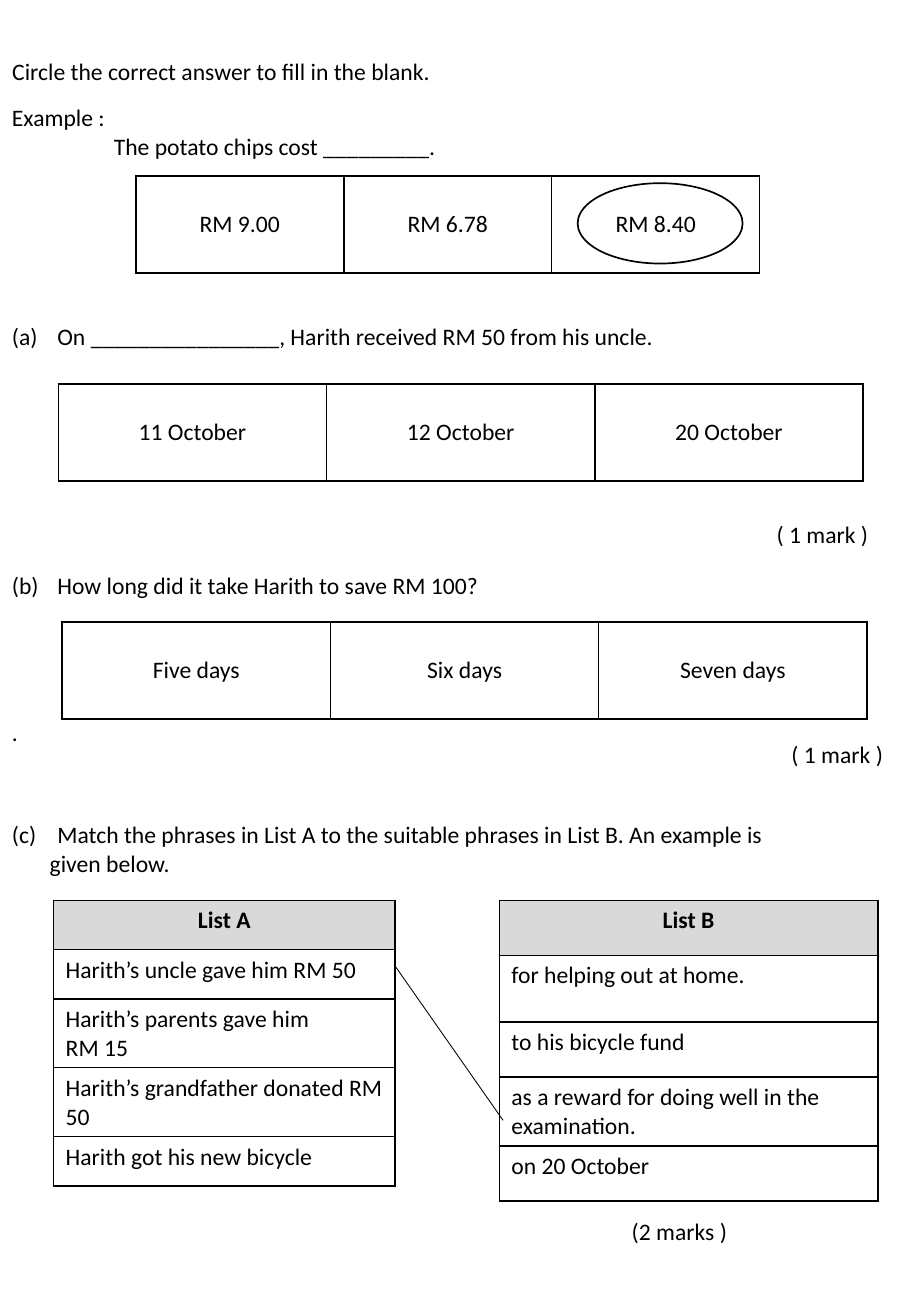
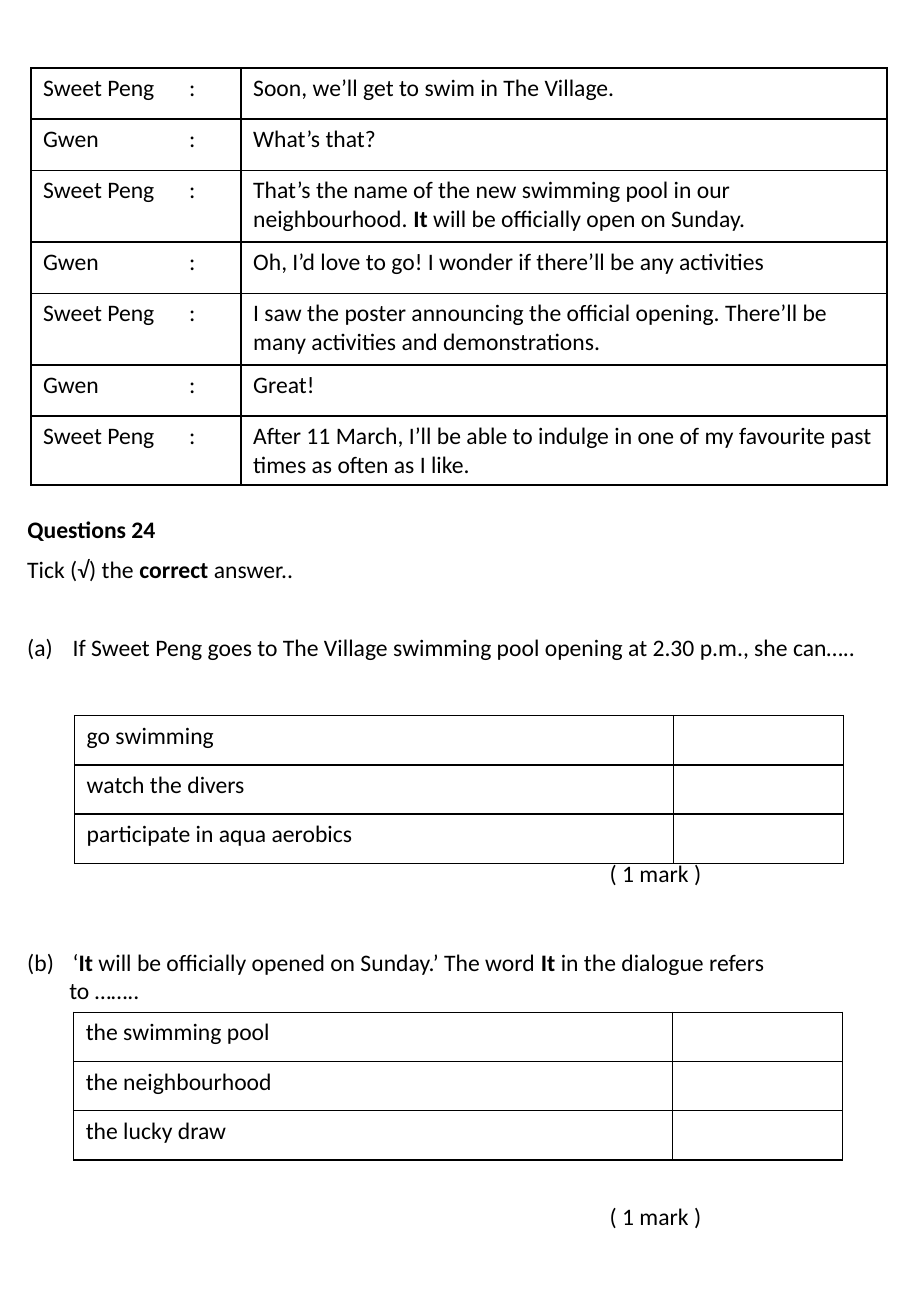
from dataclasses import dataclass

from lxml import etree
from pptx import Presentation
from pptx import util as u
from pptx.dml.color import RGBColor
from pptx.enum import shapes, text
from pptx.oxml import ns

Cm, Pt = u.Cm, u.Pt


@dataclass(frozen=True)
class Theme:
    font: str = "Calibri"
    size: int = 14
    ink: RGBColor = RGBColor(0, 0, 0)
    header: RGBColor = RGBColor(0xD9, 0xD9, 0xD9)
    border: float = 1
    hanging: float = 0.95
    width: float = 18.42


theme = Theme()
LEFT, CENTER = text.PP_ALIGN.LEFT, text.PP_ALIGN.CENTER


def write_text(frame, content, align=LEFT, number=0, indent=0, tab=0):
    for index, line in enumerate(content.split("\n")):
        paragraph = frame.add_paragraph() if index else frame.paragraphs[0]
        paragraph.alignment = align
        properties = paragraph._p.get_or_add_pPr()
        if number and not index:
            properties.set("marL", str(Cm(theme.hanging)))
            properties.set("indent", str(-Cm(theme.hanging)))
            etree.SubElement(properties, ns.qn("a:buFont"), typeface="+mj-lt")
            etree.SubElement(properties, ns.qn("a:buAutoNum"),
                             type="alphaLcParenBoth", startAt=str(number))
        elif indent and index:
            properties.set("marL", str(Cm(indent)))
            properties.set("indent", "0")
        if tab:
            tabs = etree.SubElement(properties, ns.qn("a:tabLst"))
            etree.SubElement(tabs, ns.qn("a:tab"), pos=str(Cm(tab)), algn="l")
        for part, words in enumerate(line.split("*")):
            if words:
                run = paragraph.add_run()
                run.text = words
                run.font.name = theme.font
                run.font.size = Pt(theme.size)
                run.font.bold = part % 2 == 1
                run.font.color.rgb = theme.ink


def add_grid(slide, left, top, widths, heights, rows, centered=False, header=False, tab=0):
    frame = slide.shapes.add_table(len(heights), len(widths), Cm(left), Cm(top),
                                   Cm(sum(widths)), Cm(sum(heights)))
    table = frame.table
    table.first_row = table.horz_banding = False
    for column, width in zip(table.columns, widths):
        column.width = Cm(width)
    for row, height in zip(table.rows, heights):
        row.height = Cm(height)
    for row_index, row in enumerate(rows):
        for column_index, content in enumerate(row):
            cell = table.cell(row_index, column_index)
            is_header = header and row_index == 0
            write_text(cell.text_frame, content,
                       CENTER if centered or is_header else LEFT,
                       tab=0 if column_index else tab)
            cell.vertical_anchor = text.MSO_ANCHOR.MIDDLE if centered else text.MSO_ANCHOR.TOP
            properties = cell._tc.get_or_add_tcPr()
            for side in ("lnL", "lnR", "lnT", "lnB"):
                border = etree.SubElement(properties, ns.qn(f"a:{side}"), w=str(Pt(theme.border)))
                fill = etree.SubElement(border, ns.qn("a:solidFill"))
                etree.SubElement(fill, ns.qn("a:srgbClr"), val=str(theme.ink))
            if is_header:
                cell.fill.solid()
                cell.fill.fore_color.rgb = theme.header
            else:
                cell.fill.background()


presentation = Presentation()
presentation.slide_width = Cm(19.05)
presentation.slide_height = Cm(27.51)
title_only = presentation.slide_layouts[5]

slides = []
for left, top, heading in [
    (0, 1.07, "Circle the correct answer to fill in the blank."),
    (0.32, 10.64, "*Questions 24*"),
]:
    slide = presentation.slides.add_slide(title_only)
    title = slide.shapes.title
    title.left, title.top, title.width, title.height = Cm(left), Cm(top), Cm(theme.width), Cm(0.86)
    title.text_frame.auto_size = text.MSO_AUTO_SIZE.NONE
    title.text_frame.vertical_anchor = text.MSO_ANCHOR.TOP
    write_text(title.text_frame, heading)
    slides.append(slide)
choices_slide, dialogue_slide = slides

questions = [
    (choices_slide, 0, 2.03, 0, 2.13, "Example :\nThe potato chips cost _________."),
    (choices_slide, 0, 6.6, 1, 0, "On ________________, Harith received RM 50 from his uncle."),
    (choices_slide, 0, 11.81, 2, 0, "How long did it take Harith to save RM 100?"),
    (choices_slide, 0, 14.88, 0, 0, "."),
    (choices_slide, 0, 17.02, 3, 0.79,
     "Match the phrases in List A to the suitable phrases in List B. An example is\ngiven below."),
    (dialogue_slide, 0.32, 11.48, 0, 0, "Tick (√) the *correct* answer.."),
    (dialogue_slide, 0.32, 13.11, 1, 0,
     "If Sweet Peng goes to The Village swimming pool opening at 2.30 p.m., she can….."),
    (dialogue_slide, 0.32, 19.69, 2, 0.88,
     "‘*It* will be officially opened on Sunday.’ The word *It* in the dialogue refers\nto …….."),
]
marks = [
    (choices_slide, 15.99, 10.74, "( 1 mark )"),
    (choices_slide, 16.3, 15.35, "( 1 mark )"),
    (choices_slide, 12.96, 25.32, "(2 marks )"),
    (dialogue_slide, 12.5, 17.82, "( 1 mark )"),
    (dialogue_slide, 12.5, 25.01, "( 1 mark )"),
]
labels = [(*question, theme.width) for question in questions]
labels += [(slide, left, top, 0, 0, mark, 2.75) for slide, left, top, mark in marks]
for slide, left, top, number, indent, content, width in labels:
    lines = content.count("\n") + 1
    box = slide.shapes.add_textbox(Cm(left), Cm(top), Cm(width), Cm(0.26 + 0.6 * lines))
    box.text_frame.word_wrap = True
    write_text(box.text_frame, content, number=number, indent=indent)

for left, top, width, choices in [
    (2.84, 3.68, 4.35, ["RM 9.00", "RM 6.78", "RM 8.40"]),
    (1.22, 8.03, 5.61, ["11 October", "12 October", "20 October"]),
    (1.3, 13, 5.61, ["Five days", "Six days", "Seven days"]),
]:
    add_grid(choices_slide, left, top, [width] * 3, [2.03], [choices], centered=True)

answer_circle = choices_slide.shapes.add_shape(
    shapes.MSO_SHAPE.OVAL, Cm(12.08), Cm(3.83), Cm(3.45), Cm(1.68))
answer_circle.shadow.inherit = False
answer_circle.fill.background()
answer_circle.line.color.rgb = theme.ink
answer_circle.line.width = Pt(theme.border)

for left, width, heights, phrases in [
    (1.12, 7.14, [1.03, 1.03, 1.44, 1.44, 1.03],
     ["*List A*", "Harith’s uncle gave him RM 50", "Harith’s parents gave him\nRM 15",
      "Harith’s grandfather donated RM 50", "Harith got his new bicycle"]),
    (10.44, 7.92, [1.15, 1.4, 1.15, 1.44, 1.15],
     ["*List B*", "for helping out at home.", "to his bicycle fund",
      "as a reward for doing well in the examination.", "on 20 October"]),
]:
    add_grid(choices_slide, left, 18.82, [width], heights,
             [[phrase] for phrase in phrases], header=True)

match_line = choices_slide.shapes.add_connector(
    shapes.MSO_CONNECTOR.STRAIGHT, Cm(8.28), Cm(20.22), Cm(10.52), Cm(23.42))
match_line.line.color.rgb = theme.ink
match_line.line.width = Pt(0.5)
etree.SubElement(match_line._element.spPr, ns.qn("a:effectLst"))

dialogue = [
    ("Sweet Peng", 1.07, "Soon, we’ll get to swim in The Village."),
    ("Gwen", 1.07, "What’s that?"),
    ("Sweet Peng", 1.5, "That’s the name of the new swimming pool in our neighbourhood. "
                        "*It* will be officially open on Sunday."),
    ("Gwen", 1.07, "Oh, I’d love to go! I wonder if there’ll be any activities"),
    ("Sweet Peng", 1.5, "I saw the poster announcing the official opening. "
                        "There’ll be many activities and demonstrations."),
    ("Gwen", 1.07, "Great!"),
    ("Sweet Peng", 1.44, "After 11 March, I’ll be able to indulge in one of my "
                         "favourite past times as often as I like."),
]
add_grid(dialogue_slide, 0.65, 1.42, [4.39, 13.51], [height for _, height, _ in dialogue],
         [(f"{speaker}\t:", speech) for speaker, _, speech in dialogue], tab=3.05)

for left, top, answers in [
    (1.56, 14.96, ["go swimming", "watch the divers", "participate in aqua aerobics"]),
    (1.54, 21.16, ["the swimming pool", "the neighbourhood", "the lucky draw"]),
]:
    add_grid(dialogue_slide, left, top, [12.52, 3.56], [1.03] * 3,
             [(answer, "") for answer in answers])

presentation.save("out.pptx")
